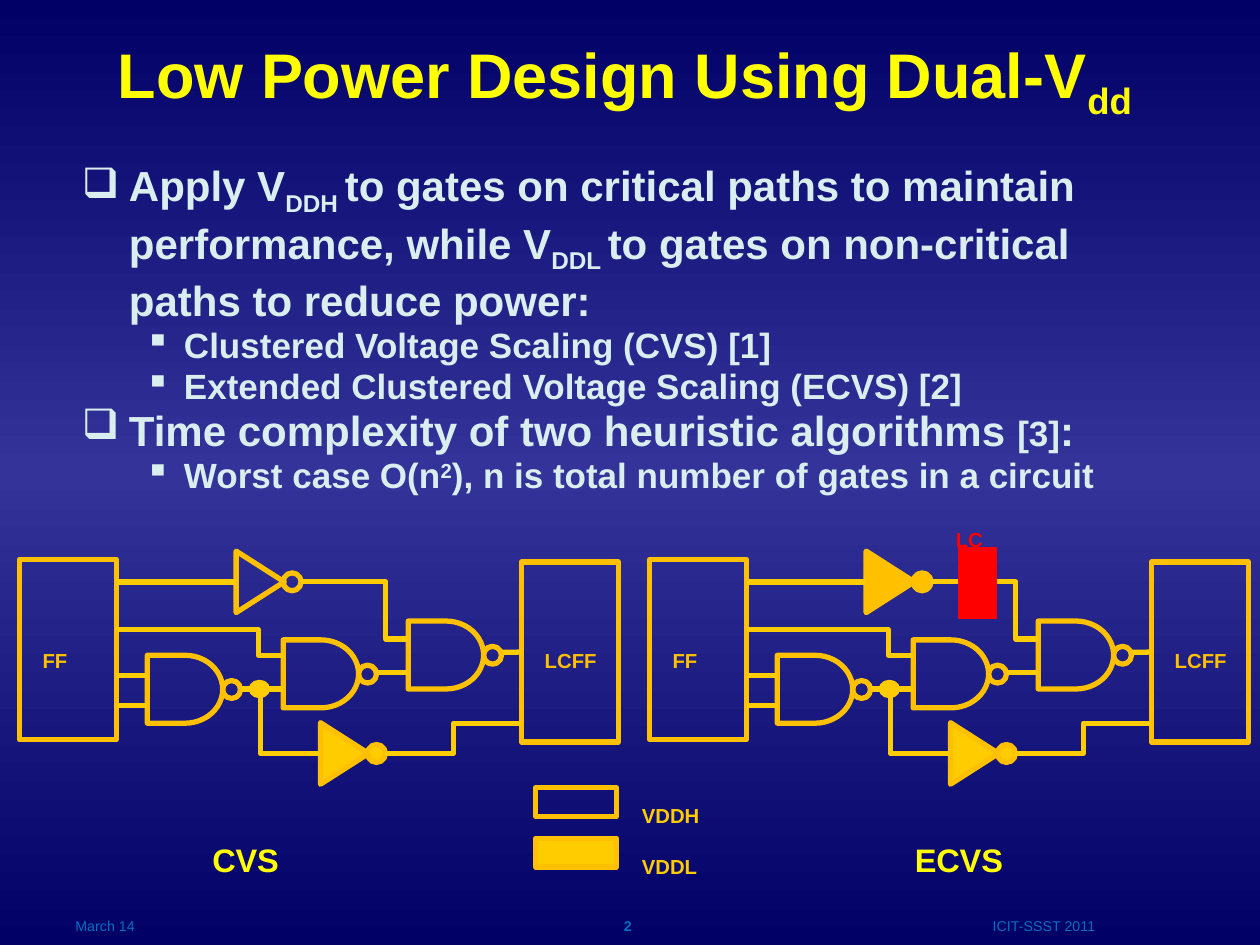
from copy import deepcopy

from lxml.etree import SubElement
from pptx import Presentation
from pptx.dml.color import RGBColor
from pptx.enum.shapes import MSO_CONNECTOR as CONN, MSO_SHAPE as SHAPE
from pptx.enum.text import MSO_ANCHOR as ANCHOR, PP_ALIGN as ALIGN
from pptx.oxml.ns import qn
from pptx.util import Cm, Pt

GOLD, AMBER, YELLOW = "FFC000", "FFCC00", "FFFF00"
PALE, BLUE, RED = "DAEDEF", "0070C0", "FF0000"
SUB, SUPER = -25, 30


def rgb(color):
    return RGBColor.from_string(color)


def add_run(p, text, size=20, color=GOLD, bold=True, base=0):
    r = p.add_run()
    r.text = text
    r.font.name, r.font.size, r.font.bold = "Arial", Pt(size), bold
    r.font.color.rgb = rgb(color)
    if base:
        r._r.get_or_add_rPr().set("baseline", str(base * 1000))


def text_frame(s, x, y, w, h):
    tf = s.shapes.add_textbox(Cm(x), Cm(y), Cm(w), Cm(h)).text_frame
    tf.word_wrap = True
    return tf


def add_label(s, x, y, w, h, text, align=ALIGN.LEFT, base=SUB, **fmt):
    p = text_frame(s, x, y, w, h).paragraphs[0]
    p.alignment = align
    add_run(p, text, base=base, **fmt)


def add_part(s, kind, x, y, w, h, fill=None, line=GOLD, width=3):
    sp = s.shapes.add_shape(kind, Cm(x), Cm(y), Cm(w), Cm(h))
    sp.shadow.inherit = False
    if fill:
        sp.fill.solid()
        sp.fill.fore_color.rgb = rgb(fill)
    else:
        sp.fill.background()
    sp.line.color.rgb = rgb(line)
    sp.line.width = Pt(width)
    SubElement(sp._element.spPr.find(qn("a:ln")), qn("a:round"))
    return sp


def add_wire(s, x1, y1, x2, y2, bend=None):
    kind = CONN.STRAIGHT if bend is None else CONN.ELBOW
    c = s.shapes.add_connector(kind, Cm(x1), Cm(y1), Cm(x2), Cm(y2))
    c.line.color.rgb = rgb(AMBER)
    c.line.width = Pt(3)
    spPr = c._element.spPr
    SubElement(spPr.find(qn("a:ln")), qn("a:round"))
    SubElement(spPr, qn("a:effectLst"))
    if bend is not None:
        geom = spPr.find(qn("a:prstGeom"))
        guides = geom.find(qn("a:avLst"))
        if guides is None:
            guides = SubElement(geom, qn("a:avLst"))
        SubElement(guides, qn("a:gd"), name="adj1", fmla=f"val {round(bend * 100000)}")
    return c


def add_nand(s, x, y):
    add_part(s, SHAPE.FLOWCHART_DELAY, x, y, 1.52, 1.37)
    add_part(s, SHAPE.OVAL, x + 1.52, y + 0.51, 0.36, 0.36)


def add_inverter(s, x, mid, fill=None):
    base, height = 1.24, 0.97
    sp = add_part(s, SHAPE.ISOSCELES_TRIANGLE, x + (height - base) / 2,
                  mid - height / 2, base, height, fill)
    sp.rotation = 90
    add_part(s, SHAPE.OVAL, x + 0.95, mid - 0.18, 0.36, 0.36, fill)


def add_circuit(s, x, y, top_fill=None, converter=False):
    add_part(s, SHAPE.RECTANGLE, x, y + 0.03, 1.96, 3.63)
    lcff = add_part(s, SHAPE.RECTANGLE, x + 10.12, y + 0.08, 1.96, 3.63)
    add_label(s, x + 0.22, y + 1.22, 1.47, 1.12, "FF")
    add_label(s, x + 9.92, y + 1.22, 2.39, 1.12, "LCFF", ALIGN.CENTER)
    for dx, dy in ((2.58, 1.96), (5.32, 1.65), (7.84, 1.27)):
        add_nand(s, x + dx, y + dy)
    add_inverter(s, x + 4.37, y + 0.48, top_fill)
    add_inverter(s, x + 6.07, y + 3.94, AMBER)
    for x1, y1, x2, y2, bend in (
        (1.96, 0.48, 4.37, 0.48, None),
        (1.96, 2.36, 2.58, 2.36, None),
        (1.96, 2.97, 2.58, 2.97, None),
        (4.46, 2.64, 5.32, 2.64, None),
        (7.2, 2.31, 7.84, 2.31, None),
        (1.96, 1.44, 5.32, 1.96, 0.85),
        (5.68, 0.48, 7.84, 1.63, 0.79),
        (4.86, 2.64, 6.07, 3.94, 0),
        (7.38, 3.94, 10.12, 3.33, 0.5),
    ):
        add_wire(s, x + x1, y + y1, x + x2, y + y2, bend)
    output = add_wire(s, x + 9.74, y + 1.9, x + 10.12, y + 1.9)
    output.end_connect(lcff, 1)
    add_part(s, SHAPE.FLOWCHART_CONNECTOR, x + 4.66, y + 2.49, 0.36, 0.3,
             AMBER, AMBER, 2)
    if converter:
        add_label(s, x + 5.93, y - 1.22, 1.7, 1.12, "LC", color=RED)
        add_part(s, SHAPE.RECTANGLE, x + 6.24, y - 0.2, 0.76, 1.42, RED, RED, 0.75)


def add_legend(s, x, y):
    for i, (text, fill) in enumerate((("VDDH", None), ("VDDL", AMBER))):
        top = y + i * 1.02
        add_part(s, SHAPE.RECTANGLE, x, top, 1.63, 0.58, fill)
        add_label(s, x + 1.89, top - 0.28, 2.87, 1.12, text, color=AMBER)


def add_title(s, x, y, w, h):
    tf = text_frame(s, x, y, w, h)
    tf.vertical_anchor = ANCHOR.MIDDLE
    p = tf.paragraphs[0]
    p.alignment = ALIGN.CENTER
    add_run(p, "Low Power Design Using Dual-V", size=36, color=YELLOW)
    add_run(p, "dd ", size=36, color=YELLOW, base=SUB)


def add_body(s, x, y, w, h):
    levels = (("❑", 24, 0.95, 0.95), ("▪", 20, 2.06, 0.79))
    items = (
        (0, 1, [("Apply V",), ("DDH ", 24, SUB),
                ("to gates on critical paths to maintain performance, while V",),
                ("DDL ", 24, SUB),
                ("to gates on non-critical paths to reduce power:",)]),
        (1, 0.8, [("Clustered Voltage Scaling (CVS) [1]",)]),
        (1, 0.8, [("Extended Clustered Voltage Scaling (ECVS) [2]",)]),
        (0, 0.8, [("Time complexity of two heuristic algorithms ",),
                  ("[3]", 20), (":",)]),
        (1, 0.8, [("Worst case O(n",), ("2", 20, SUPER),
                  ("), n is total number of gates in a circuit",)]),
    )
    tf = text_frame(s, x, y, w, h)
    for i, (level, spacing, runs) in enumerate(items):
        bullet, default, margin, hang = levels[level]
        p = tf.paragraphs[0] if i == 0 else tf.add_paragraph()
        p.level, p.line_spacing, p.space_before = level, spacing, Pt(default * 0.2)
        pPr = p._p.get_or_add_pPr()
        pPr.set("marL", str(Cm(margin)))
        pPr.set("indent", str(-Cm(hang)))
        SubElement(pPr, qn("a:buChar"), char=bullet)
        for text, size, base in ((*r, default, 0)[:3] if len(r) != 2 else (*r, 0)
                                 for r in runs):
            add_run(p, text, size=size, color=PALE, base=base)


def add_footer(s, y):
    for x, w, text, align, bold in (
        (1.27, 5.92, "March 14", ALIGN.LEFT, False),
        (9.7, 5.92, "2", ALIGN.CENTER, True),
        (17.02, 8.05, "ICIT-SSST 2011", ALIGN.CENTER, False),
    ):
        add_label(s, x, y, w, 1.32, text, align, size=14, color=BLUE, bold=bold)


def set_background(s):
    fill = s.background.fill
    fill.gradient()
    fill.gradient_angle = 270
    stops = s._element.xpath(".//a:gsLst")[0]
    stops.append(deepcopy(stops[-1]))
    for stop, color, pos in zip(fill.gradient_stops,
                                ("000066", "333399", "000066"), (0, 0.5, 1)):
        stop.color.rgb = rgb(color)
        stop.position = pos


def main():
    prs = Presentation()
    prs.slide_width, prs.slide_height = Cm(25.4), Cm(19.05)
    s = prs.slides.add_slide(prs.slide_layouts[6])
    set_background(s)
    add_title(s, 1.27, 0, 22.86, 3.18)
    add_body(s, 1.4, 3.1, 22.53, 6.81)
    add_circuit(s, 0.39, 11.25)
    add_circuit(s, 13.09, 11.25, GOLD, converter=True)
    for x, text in ((2.74, "CVS"), (17.12, "ECVS")):
        add_label(s, x, 16.05, 4.42, 1.17, text, ALIGN.CENTER, size=32, color=YELLOW)
    add_legend(s, 10.8, 15.88)
    add_footer(s, 18.03)
    prs.save("out.pptx")


if __name__ == "__main__":
    main()
